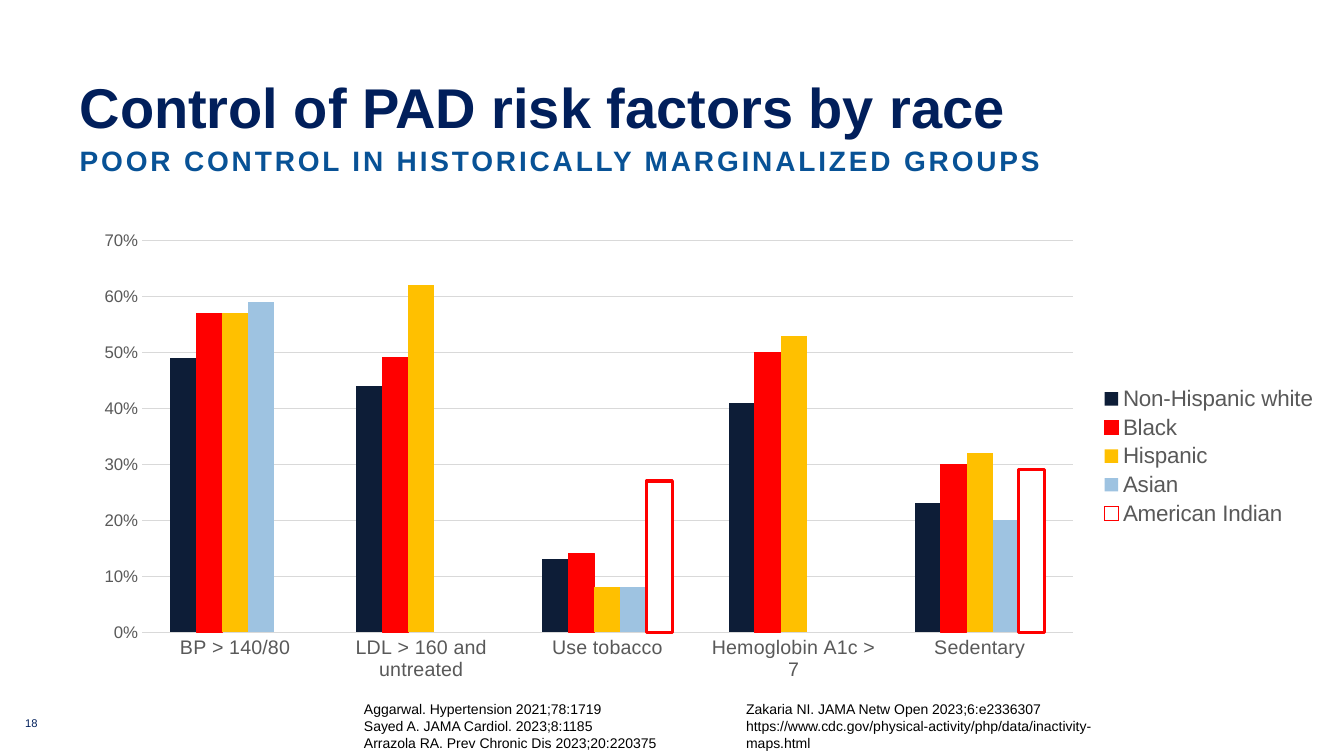
from pptx import Presentation
from pptx import util as u
from pptx.chart.data import CategoryChartData
from pptx.dml.color import RGBColor
from pptx.enum import chart as ch, text
from pptx.oxml import parse_xml
from pptx.oxml.ns import nsdecls

TITLE = "Control of PAD risk factors by race"
SUB = "POOR CONTROL IN HISTORICALLY MARGINALIZED GROUPS"
PAGE = "18"
CATS = ["BP > 140/80", "LDL > 160 and untreated", "Use tobacco",
        "Hemoglobin A1c > 7", "Sedentary"]
# name, values, fill, line colour, line width
GROUPS = [
    ("Non-Hispanic white", (0.49, 0.44, 0.13, 0.41, 0.23), "0D1D37", None, 0),
    ("Black", (0.57, 0.49, 0.14, 0.5, 0.3), "FF0000", "FF0000", 0.75),
    ("Hispanic", (0.57, 0.62, 0.08, 0.53, 0.32), "FFC000", None, 0),
    ("Asian", (0.59, None, 0.08, None, 0.2), "9EC3E1", None, 0),
    ("American Indian", (None, None, 0.27, None, 0.29), "FFFFFF", "FF0000", 2.25),
]
REFS = [
    ["Aggarwal. Hypertension 2021;78:1719",
     "Sayed A. JAMA Cardiol. 2023;8:1185",
     "Arrazola RA. Prev Chronic Dis 2023;20:220375"],
    ["Zakaria NI. JAMA Netw Open 2023;6:e2336307",
     "https://www.cdc.gov/physical-activity/php/data/inactivity-maps.html"],
]
THEME = dict(
    font="Arial", navy="011F5B", blue="085296", black="000000",
    gray="595959", rule="D9D9D9",
    title=40, sub=20, legend=16, cat=14, val=12, ref=10, page=8,
)
LEFT, WIDE = 0.79, 11.76
REF_X, REF_W = 3.61, 3.79
PLOT = dict(x=0.05, y=0.04, w=0.745, h=0.836)


def style(font, size, color, bold=False):
    font.name, font.size, font.bold = THEME["font"], u.Pt(THEME[size]), bold
    font.color.rgb = RGBColor.from_string(THEME[color])


def write(slide, box, lines, size, color, bold=False,
          anchor=text.MSO_ANCHOR.TOP):
    frame = slide.shapes.add_textbox(*map(u.Inches, box)).text_frame
    frame.margin_left = frame.margin_right = 0
    frame.margin_top = frame.margin_bottom = 0
    frame.word_wrap, frame.vertical_anchor = True, anchor
    frame.text = "\n".join(lines)
    for para in frame.paragraphs:
        style(para.font, size, color, bold)
    return frame.paragraphs[0]


def rule(line):
    line.color.rgb = RGBColor.from_string(THEME["rule"])
    line.width = u.Pt(0.75)


def place(chart):
    """Fix the inner plot area as fractions of the chart frame."""
    area = chart.plots[0]._element.getparent()
    for old in area.findall("{*}layout"):
        area.remove(old)
    marks = "".join(f'<c:{k}Mode val="edge"/>' for k in "xy")
    marks += "".join(f'<c:{k} val="{v}"/>' for k, v in PLOT.items())
    area.insert(0, parse_xml(
        f'<c:layout {nsdecls("c")}><c:manualLayout>'
        f'<c:layoutTarget val="inner"/>{marks}</c:manualLayout></c:layout>'))


def draw(slide):
    data = CategoryChartData(number_format="0%")
    data.categories = CATS
    for name, vals, *_ in GROUPS:
        data.add_series(name, vals)
    box = map(u.Inches, (LEFT, 2.2, 12.39, 4.65))
    chart = slide.shapes.add_chart(
        ch.XL_CHART_TYPE.COLUMN_CLUSTERED, *box, data).chart
    style(chart.font, "ref", "black")
    chart.has_title = False
    chart.has_legend = True
    chart.legend.position = ch.XL_LEGEND_POSITION.RIGHT
    chart.legend.include_in_layout = False
    style(chart.legend.font, "legend", "gray")

    cat, val = chart.category_axis, chart.value_axis
    for axis, size in ((cat, "cat"), (val, "val")):
        axis.major_tick_mark = axis.minor_tick_mark = ch.XL_TICK_MARK.NONE
        style(axis.tick_labels.font, size, "gray")
    rule(cat.format.line)
    val.format.line.fill.background()
    val.minimum_scale, val.maximum_scale, val.major_unit = 0, 0.7, 0.1
    val.tick_labels.number_format = "0%"
    val.tick_labels.number_format_is_linked = False
    rule(val.major_gridlines.format.line)

    plot = chart.plots[0]
    plot.gap_width, plot.overlap, plot.vary_by_categories = 216, 0, False
    for bars, (_, _, fill, edge, width) in zip(plot.series, GROUPS):
        bars.invert_if_negative = False
        bars.format.fill.solid()
        bars.format.fill.fore_color.rgb = RGBColor.from_string(fill)
        if edge:
            bars.format.line.color.rgb = RGBColor.from_string(edge)
            bars.format.line.width = u.Pt(width)
        else:
            bars.format.line.fill.background()
    place(chart)


def main():
    deck = Presentation()
    deck.slide_width, deck.slide_height = u.Inches(13.33), u.Inches(7.5)
    slide = deck.slides.add_slide(deck.slide_layouts[6])
    head = write(slide, (LEFT, 0.79, WIDE, 0.61), [TITLE], "title", "navy", True)
    head.line_spacing = 0.9
    sub = write(slide, (LEFT, 1.4, WIDE, 0.38), [SUB], "sub", "blue", True,
                text.MSO_ANCHOR.MIDDLE)
    sub.runs[0].font._element.set("spc", "200")
    draw(slide)
    for col, lines in enumerate(REFS):
        write(slide, (REF_X + col * REF_W, 6.95, REF_W, 0.51), lines,
              "ref", "black")
    write(slide, (0.25, 7.04, 0.29, 0.2), [PAGE], "page", "navy",
          anchor=text.MSO_ANCHOR.BOTTOM)
    deck.save("out.pptx")


if __name__ == "__main__":
    main()
